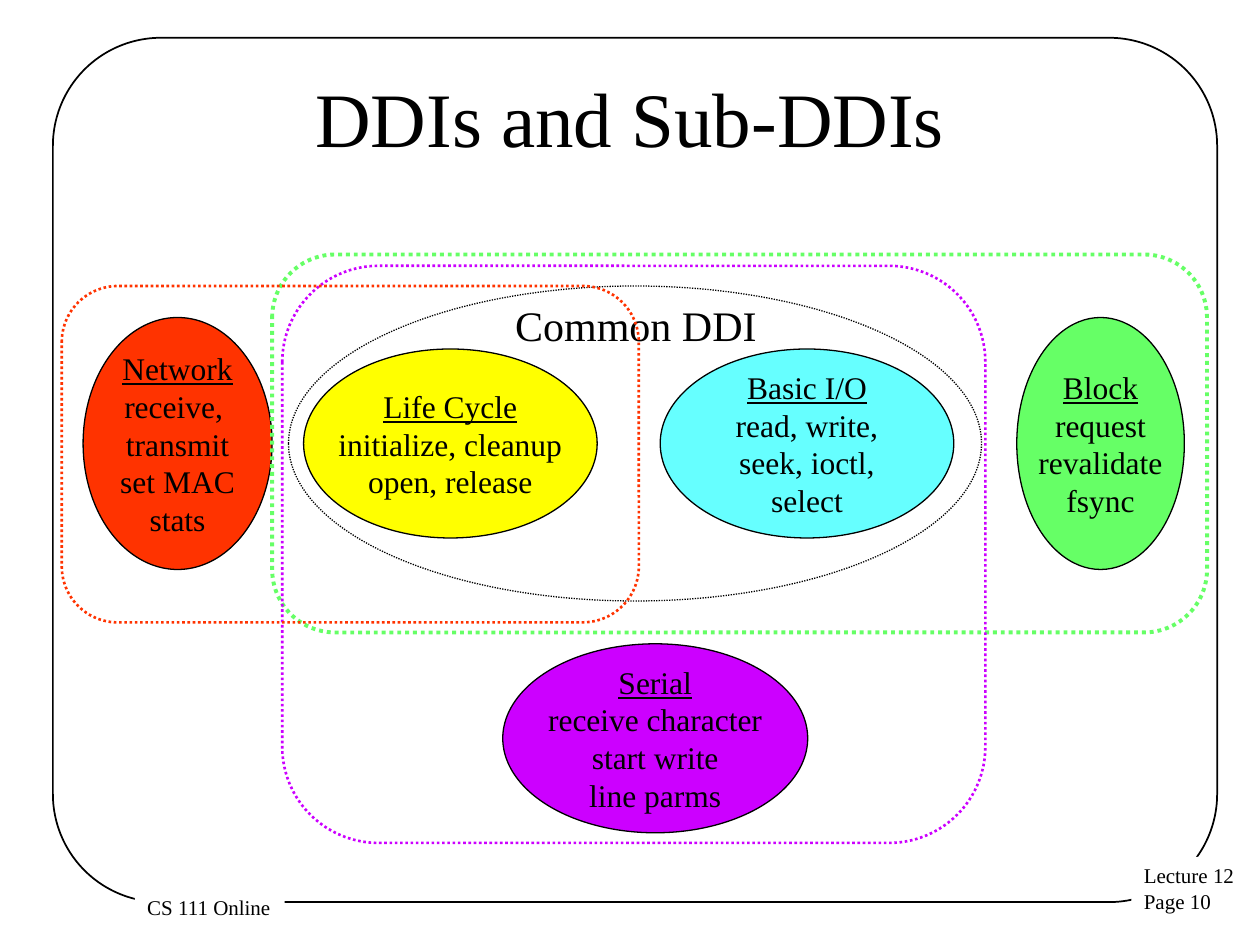
from pptx import Presentation
from pptx.dml.color import RGBColor
from pptx.enum.dml import MSO_LINE
from pptx.enum.shapes import MSO_SHAPE as SHAPE
from pptx.enum.text import MSO_ANCHOR as ANCHOR, MSO_AUTO_SIZE as AUTO_SIZE, PP_ALIGN as ALIGN
from pptx.util import Inches, Pt

BLACK = RGBColor(0x00, 0x00, 0x00)
WHITE = RGBColor(0xFF, 0xFF, 0xFF)
CYAN = RGBColor(0x66, 0xFF, 0xFF)
YELLOW = RGBColor(0xFF, 0xFF, 0x00)
GREEN = RGBColor(0x66, 0xFF, 0x66)
RED = RGBColor(0xFF, 0x33, 0x00)
PURPLE = RGBColor(0xCC, 0x00, 0xFF)
FONT = "Times New Roman"


def add_outline(kind, place, color, width, fill=None, dash=None):
    shape = slide.shapes.add_shape(kind, *map(Inches, place))
    shape.shadow.inherit = False
    if fill is None:
        shape.fill.background()
    else:
        shape.fill.solid()
        shape.fill.fore_color.rgb = fill
    shape.line.color.rgb = color
    shape.line.width = Pt(width)
    if dash is not None:
        shape.line.dash_style = dash
    return shape


def write_lines(shape, lines, size, align, underline_first=False):
    frame = shape.text_frame
    for index, line in enumerate(lines):
        para = frame.paragraphs[0] if index == 0 else frame.add_paragraph()
        para.alignment = align
        span = para.add_run()
        span.text = line
        span.font.color.rgb = BLACK
        font_format = {"name": FONT, "size": Pt(size)}
        if underline_first and index == 0:
            font_format["underline"] = True
        for name, value in font_format.items():
            setattr(span.font, name, value)


deck = Presentation()
deck.slide_width = Inches(10)
deck.slide_height = Inches(7.5)
slide = deck.slides.add_slide(deck.slide_layouts[5])

page_frame = add_outline(SHAPE.ROUNDED_RECTANGLE, (0.42, 0.3, 9.24, 6.86), BLACK, 1)
page_frame.adjustments[0] = 0.125

footers = [
    ((8.98, 6.8, 0.93, 0.51), ["Lecture 12", "Page 10"]),
    ((1.07, 7.05, 1.19, 0.3), ["CS 111 Online"]),
]
for place, lines in footers:
    box = slide.shapes.add_textbox(*map(Inches, place))
    box.fill.solid()
    box.fill.fore_color.rgb = WHITE
    box.text_frame.word_wrap = False
    box.text_frame.auto_size = AUTO_SIZE.SHAPE_TO_FIT_TEXT
    write_lines(box, lines, 12, ALIGN.LEFT)

title = slide.shapes.title
title_place = {"left": 0.5, "top": 0.3, "width": 9, "height": 1.25}
for name, value in title_place.items():
    setattr(title, name, Inches(value))
title.text_frame.vertical_anchor = ANCHOR.MIDDLE
write_lines(title, ["DDIs and Sub-DDIs"], 44, ALIGN.CENTER)

add_outline(SHAPE.OVAL, (2.29, 2.27, 5.5, 2.5), BLACK, 0.75, dash=MSO_LINE.ROUND_DOT)

common_label = slide.shapes.add_textbox(Inches(3.99), Inches(2.33), Inches(2.25), Inches(0.5))
common_label.text_frame.word_wrap = True
write_lines(common_label, ["Common DDI"], 24, ALIGN.LEFT)

interfaces = [
    ((5.24, 2.77, 2.33, 1.5), CYAN, ["Basic I/O", "read, write,", "seek, ioctl,", "select"]),
    ((2.41, 2.77, 2.33, 1.5), YELLOW, ["Life Cycle", "initialize, cleanup", "open, release"]),
    ((8.07, 2.52, 1.33, 2), GREEN, ["Block", "request", "revalidate", "fsync"]),
    ((0.66, 2.52, 1.5, 2), RED, ["Network", "receive, ", "transmit", "set MAC", "stats"]),
    ((3.99, 5.11, 2.42, 1.5), PURPLE, ["Serial", "receive character", "start write", "line parms"]),
]
for place, fill, lines in interfaces:
    oval = add_outline(SHAPE.OVAL, place, BLACK, 0.75, fill=fill)
    oval.text_frame.word_wrap = False
    oval.text_frame.vertical_anchor = ANCHOR.MIDDLE
    write_lines(oval, lines, 18, ALIGN.CENTER, underline_first=True)

groupings = [
    ((2.16, 2.02, 7.42, 3), GREEN, 2.25),
    ((2.24, 2.11, 5.58, 4.58), PURPLE, 1.5),
    ((0.49, 2.27, 4.58, 2.67), RED, 1.5),
]
for place, color, width in groupings:
    add_outline(SHAPE.ROUNDED_RECTANGLE, place, color, width, dash=MSO_LINE.ROUND_DOT)

deck.save("out.pptx")
